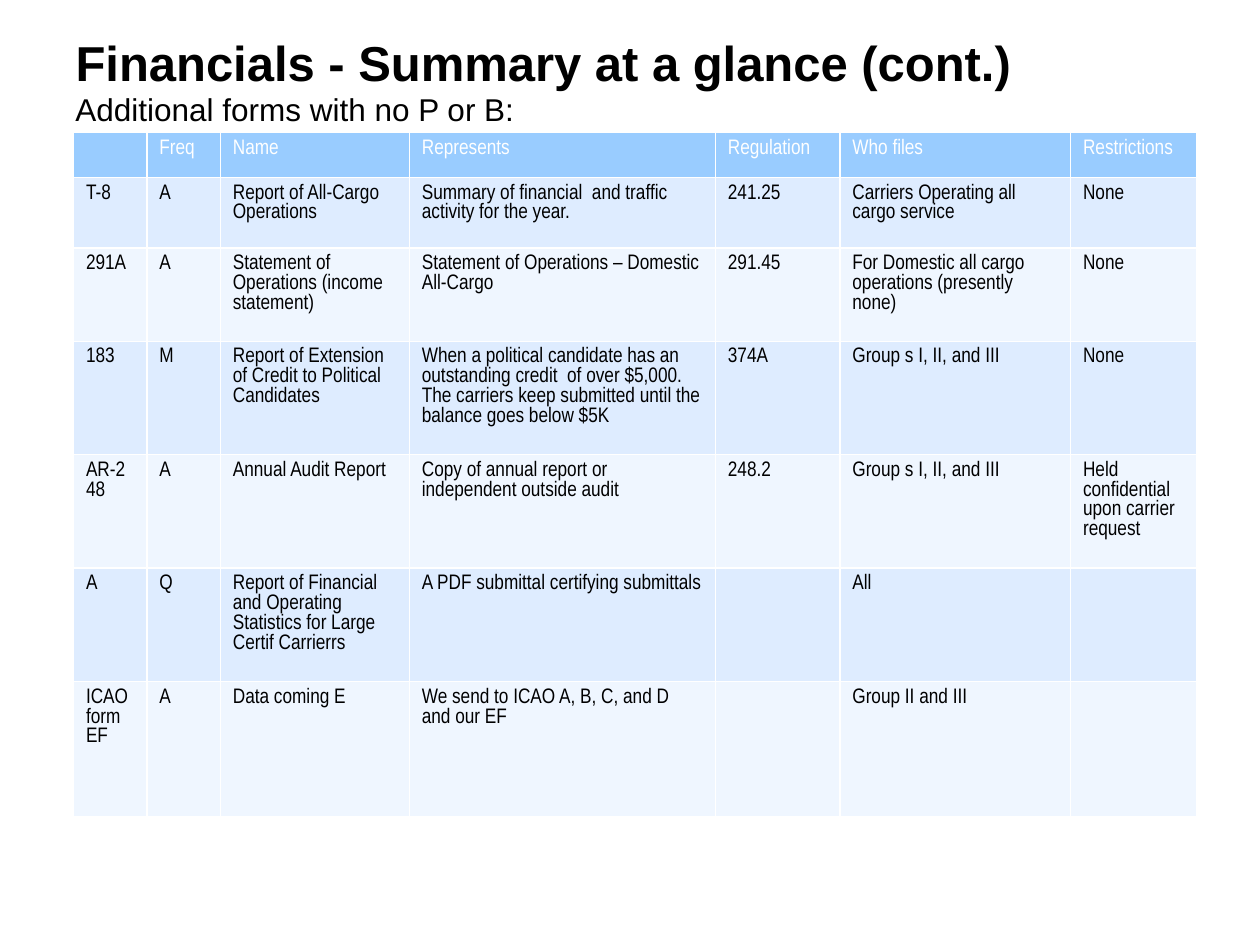
from lxml.etree import SubElement
from pptx import Presentation
from pptx.dml.color import RGBColor
from pptx.enum.text import MSO_ANCHOR as Anchor, PP_ALIGN as Align
from pptx.oxml.ns import qn
from pptx.util import Cm, Pt

COLORS = {
    "text": "000000",
    "header_text": "FFFFFF",
    "border": "FFFFFF",
    "header": "99CCFF",
    "band_dark": "DEECFF",
    "band_light": "EFF6FF",
}

TABLE_SIZE = 12
COL_WIDTHS = [1.48, 1.48, 3.81, 6.17, 2.51, 4.65, 2.54]
ROW_HEIGHTS = [0.91, 1.42, 1.88, 2.13, 1.91, 2.24, 2.72]

FORMS = [
    ["", "Freq", "Name", "Represents", "Regulation", "Who files", "Restrictions"],
    ["T-8", "A", "Report of All-Cargo Operations",
     "Summary of financial  and traffic activity for the year.",
     "241.25", "Carriers Operating all cargo service", "None"],
    ["291A", "A", "Statement of Operations (income statement)",
     "Statement of Operations – Domestic All-Cargo",
     "291.45", "For Domestic all cargo operations (presently none)", "None"],
    ["183", "M", "Report of Extension of Credit to Political Candidates",
     "When a political candidate has an outstanding credit  of over $5,000.  "
     "The carriers keep submitted until the balance goes below $5K",
     "374A", "Group s I, II, and III", "None"],
    ["AR-248", "A", "Annual Audit Report",
     "Copy of annual report or independent outside audit",
     "248.2", "Group s I, II, and III", "Held confidential  upon carrier  request"],
    ["A", "Q", "Report of Financial and Operating Statistics for Large Certif Carrierrs",
     "A PDF submittal certifying submittals", "", "All", ""],
    ["ICAO form EF", "A", "Data coming E",
     "We send to ICAO A, B, C, and D and our EF", "", "Group II and III", ""],
]


def rgb(name):
    return RGBColor.from_string(COLORS[name])


def add_run(p, text, size, font="Arial", color="text", bold=False):
    r = p.add_run()
    r.text = text
    r.font.name = font
    r.font.size = Pt(size)
    r.font.bold = bold
    r.font.color.rgb = rgb(color)


def set_title(s, text):
    title = s.shapes.title
    title.left, title.top = Cm(1.27), Cm(0.43)
    title.width, title.height = Cm(22.86), Cm(1.65)
    tf = title.text_frame
    tf.vertical_anchor = Anchor.MIDDLE
    p = tf.paragraphs[0]
    p.alignment = Align.LEFT
    add_run(p, text, 28, bold=True)


def add_subtitle(s, text):
    box = s.shapes.add_textbox(Cm(1.27), Cm(1.7), Cm(22.86), Cm(0.97))
    tf = box.text_frame
    tf.word_wrap = True
    add_run(tf.paragraphs[0], text, 18)


def set_borders(cell):
    tc_pr = cell._tc.get_or_add_tcPr()
    for side in "LRTB":
        ln = SubElement(tc_pr, qn(f"a:ln{side}"), w=str(Pt(1)))
        fill = SubElement(ln, qn("a:solidFill"))
        SubElement(fill, qn("a:srgbClr"), val=COLORS["border"])


def fill_cell(cell, text, fill, color):
    set_borders(cell)
    cell.fill.solid()
    cell.fill.fore_color.rgb = rgb(fill)
    p = cell.text_frame.paragraphs[0]
    if text:
        add_run(p, text, TABLE_SIZE, "Arial Narrow", color)
    else:
        # Keeps an empty cell from stretching its row
        SubElement(p._p, qn("a:endParaRPr"), sz=str(TABLE_SIZE * 100))


def add_forms_table(s):
    frame = s.shapes.add_table(len(FORMS), len(COL_WIDTHS), Cm(1.48), Cm(2.67),
                               Cm(sum(COL_WIDTHS)), Cm(sum(ROW_HEIGHTS)))
    table = frame.table
    table.first_row = table.horz_banding = False
    for col, width in zip(table.columns, COL_WIDTHS):
        col.width = Cm(width)
    for row, height in zip(table.rows, ROW_HEIGHTS):
        row.height = Cm(height)

    for i, values in enumerate(FORMS):
        # Header row first, then alternating bands
        if i == 0:
            style = ("header", "header_text")
        else:
            style = ("band_dark" if i % 2 else "band_light", "text")
        for j, text in enumerate(values):
            fill_cell(table.cell(i, j), text, *style)


def main():
    prs = Presentation()
    prs.slide_width, prs.slide_height = Cm(25.4), Cm(19.05)
    s = prs.slides.add_slide(prs.slide_layouts[5])

    # Headings
    set_title(s, "Financials - Summary at a glance (cont.)")
    add_subtitle(s, "Additional forms with no P or B:")

    # Table of forms
    add_forms_table(s)

    prs.save("out.pptx")


if __name__ == "__main__":
    main()
